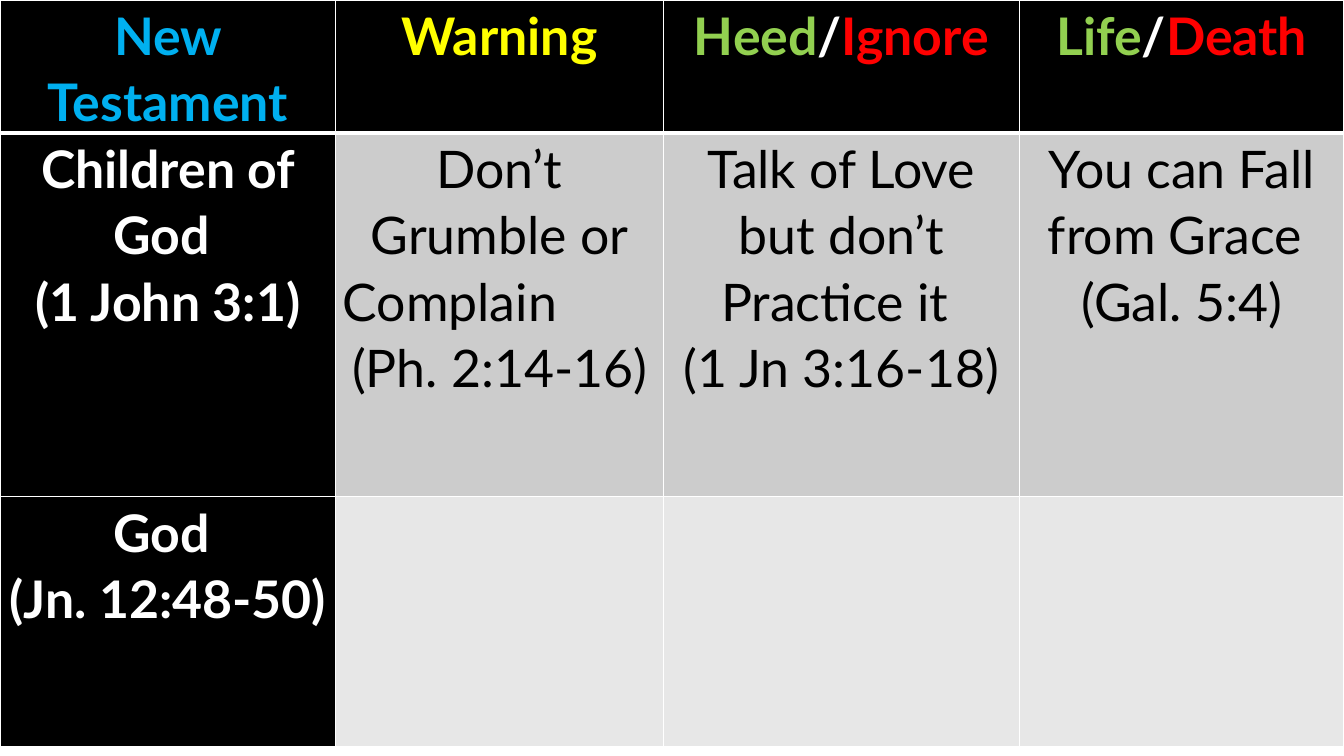
from lxml import etree
from pptx import Presentation
from pptx import util as u
from pptx.dml.color import RGBColor
from pptx.enum import text
from pptx.oxml import ns

COLORS = {"blue": "00B0F0", "yellow": "FFFF00", "green": "92D050", "red": "FF0000",
          "white": "FFFFFF", "black": "000000", "mid": "CCCCCC", "pale": "E7E7E7"}
HEADERS = [
    [("New Testament", "blue")],
    [("Warning", "yellow")],
    [("Heed", "green"), ("/", "white"), ("Ignore", "red")],
    [("Life", "green"), ("/", "white"), ("Death", "red")],
]
BODY = [
    [["Children of God ", "(1 John 3:1)"],
     ["Don’t Grumble or", "Complain", "(Ph. 2:14-16)"],
     ["Talk of Love but don’t Practice it ", "(1 Jn 3:16-18)"],
     ["You can Fall from Grace ", "(Gal. 5:4)"]],
    [["God ", "(Jn. 12:48-50)"], [], [], []],
]
LEFT_ALIGNED = {"Complain"}
BODY_FILLS = ["mid", "pale"]
COLS = [3.33, 3.25, 3.53, 3.22]
ROWS = [1.31, 3.61, 2.48]
MARGINS = {"margin_left": 0.07, "margin_right": 0.07, "margin_top": 0, "margin_bottom": 0}
FONT = {"name": "Lato", "size": u.Pt(37)}


def set_borders(cell, top, bottom):
    tcPr = cell._tc.get_or_add_tcPr()
    for i, (side, width) in enumerate([("L", 1), ("R", 1), ("T", top), ("B", bottom)]):
        ln = etree.Element(ns.qn(f"a:ln{side}"), w=str(u.Pt(width)))
        fill = etree.SubElement(ln, ns.qn("a:solidFill"))
        etree.SubElement(fill, ns.qn("a:srgbClr"), val=COLORS["white"])
        tcPr.insert(i, ln)


def fill_cell(cell, paragraphs, fill, bold):
    for name, value in MARGINS.items():
        setattr(cell, name, u.Inches(value))
    cell.fill.solid()
    cell.fill.fore_color.rgb = RGBColor.from_string(COLORS[fill])
    tf = cell.text_frame
    for i, runs in enumerate(paragraphs):
        p = tf.add_paragraph() if i else tf.paragraphs[0]
        left = runs[0][0] in LEFT_ALIGNED
        p.alignment = text.PP_ALIGN.LEFT if left else text.PP_ALIGN.CENTER
        p.line_spacing = 1.07
        for words, color in runs:
            r = p.add_run()
            r.text = words
            for name, value in {**FONT, "bold": bold}.items():
                setattr(r.font, name, value)
            r.font.color.rgb = RGBColor.from_string(COLORS[color])


def main():
    prs = Presentation()
    prs.slide_width, prs.slide_height = u.Inches(13.33), u.Inches(7.5)
    s = prs.slides.add_slide(prs.slide_layouts[6])
    table = s.shapes.add_table(len(ROWS), len(COLS), 0, 0,
                               u.Inches(sum(COLS)), u.Inches(sum(ROWS))).table
    table.horz_banding = False
    table.first_col = True
    for col, width in zip(table.columns, COLS):
        col.width = u.Inches(width)
    for row, height in zip(table.rows, ROWS):
        row.height = u.Inches(height)

    for c, runs in enumerate(HEADERS):
        cell = table.cell(0, c)
        fill_cell(cell, [runs], "black", True)
        set_borders(cell, 1, 3)
    for r, (row, shade) in enumerate(zip(BODY, BODY_FILLS), 1):
        for c, lines in enumerate(row):
            label = c == 0
            cell = table.cell(r, c)
            color = "white" if label else "black"
            fill_cell(cell, [[(line, color)] for line in lines],
                      "black" if label else shade, label)
            set_borders(cell, 3 if r == 1 else 1, 1)
    prs.save("out.pptx")


if __name__ == "__main__":
    main()
